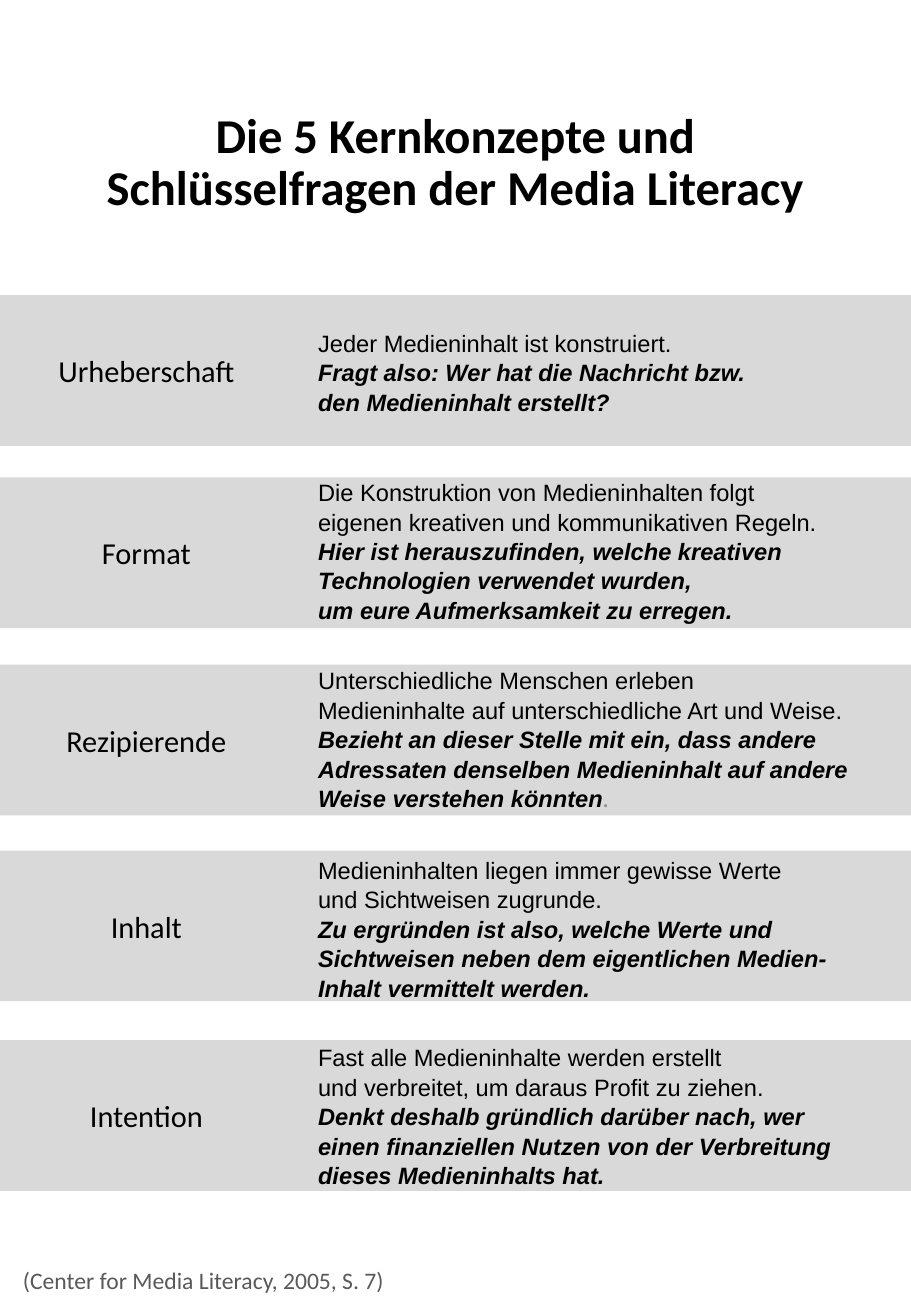
import pptx
import pptx.dml.color
import pptx.enum.shapes
import pptx.enum.text
import pptx.util

PX = 9144  # 100 px to the inch
SLIDE_W, SLIDE_H = 750, 1083
BAND_H = 124
LABEL_W = 241
BODY_LEFT, BODY_H = 252, 88
COLORS = {"band": "D9D9D9", "text": "000000", "source": "595959", "period": "8C8C8C"}
ANCHOR = pptx.enum.text.MSO_ANCHOR
ALIGN = pptx.enum.text.PP_ALIGN

# band top, body top, label, statement lines, question lines
CONCEPTS = [
    (243, 262, "Urheberschaft",
     ["Jeder Medieninhalt ist konstruiert."],
     ["Fragt also: Wer hat die Nachricht bzw.", "den Medieninhalt erstellt?"]),
    (393, 409, "Format",
     ["Die Konstruktion von Medieninhalten folgt",
      "eigenen kreativen und kommunikativen Regeln."],
     ["Hier ist herauszufinden, welche kreativen",
      "Technologien verwendet wurden,",
      "um eure Aufmerksamkeit zu erregen."]),
    (547, 564, "Rezipierende",
     ["Unterschiedliche Menschen erleben",
      "Medieninhalte auf unterschiedliche Art und Weise."],
     ["Bezieht an dieser Stelle mit ein, dass andere",
      "Adressaten denselben Medieninhalt auf andere",
      "Weise verstehen könnten"]),
    (700, 720, "Inhalt",
     ["Medieninhalten liegen immer gewisse Werte",
      "und Sichtweisen zugrunde."],
     ["Zu ergründen ist also, welche Werte und",
      "Sichtweisen neben dem eigentlichen Medien-",
      "Inhalt vermittelt werden."]),
    (856, 874, "Intention",
     ["Fast alle Medieninhalte werden erstellt",
      "und verbreitet, um daraus Profit zu ziehen."],
     ["Denkt deshalb gründlich darüber nach, wer",
      "einen finanziellen Nutzen von der Verbreitung",
      "dieses Medieninhalts hat."]),
]


def box(*lengths):
    return [pptx.util.Emu(length * PX) for length in lengths]


def rgb(name):
    return pptx.dml.color.RGBColor.from_string(COLORS[name])


def write(paragraph, text, size=14, font="Calibri", color="text", bold=False,
          italic=False, align=ALIGN.LEFT, spacing=1.0):
    """Append a formatted run to the paragraph."""
    paragraph.alignment = align
    paragraph.line_spacing = spacing
    run = paragraph.add_run()
    run.text = text
    run.font.size = pptx.util.Pt(size)
    run.font.name = font
    run.font.bold = bold
    run.font.italic = italic
    run.font.color.rgb = rgb(color)


def add_frame(slide, left, top, width, height, anchor=ANCHOR.MIDDLE):
    frame = slide.shapes.add_textbox(*box(left, top, width, height)).text_frame
    frame.word_wrap = True
    frame.vertical_anchor = anchor
    return frame


def add_title(slide):
    title = slide.shapes.title
    title.left, title.top, title.width, title.height = box(56, 118, 638, 65)
    frame = title.text_frame
    frame.auto_size = pptx.enum.text.MSO_AUTO_SIZE.NONE
    frame.word_wrap = True
    frame.vertical_anchor = ANCHOR.BOTTOM
    write(frame.paragraphs[0], "Die 5 Kernkonzepte und Schlüsselfragen der Media Literacy",
          size=28.8, bold=True, align=ALIGN.CENTER, spacing=0.9)


def add_band(slide, top):
    band = slide.shapes.add_shape(pptx.enum.shapes.MSO_SHAPE.RECTANGLE,
                                  *box(0, top, SLIDE_W, BAND_H))
    band.shadow.inherit = False
    band.fill.solid()
    band.fill.fore_color.rgb = rgb("band")
    band.line.fill.background()


def add_label(slide, top, label):
    frame = add_frame(slide, 0, top, LABEL_W, BAND_H)
    write(frame.paragraphs[0], label, size=18, align=ALIGN.CENTER)


def add_body(slide, top, statement, question):
    """Write the plain statement and the emphasised question, line by line."""
    frame = add_frame(slide, BODY_LEFT, top, SLIDE_W - BODY_LEFT, BODY_H)
    for index, line in enumerate(statement + question):
        paragraph = frame.add_paragraph() if index else frame.paragraphs[0]
        emphasis = index >= len(statement)
        write(paragraph, line, font="Arial", bold=emphasis, italic=emphasis, spacing=1.04)
    return frame


def main():
    deck = pptx.Presentation()
    deck.slide_width, deck.slide_height = box(SLIDE_W, SLIDE_H)
    slide = deck.slides.add_slide(deck.slide_layouts[5])
    add_title(slide)
    for band_top, body_top, label, statement, question in CONCEPTS:
        add_band(slide, band_top)
        add_label(slide, band_top, label)
        body = add_body(slide, body_top, statement, question)
        if label == "Rezipierende":
            write(body.paragraphs[-1], ".", size=12, color="period",
                  bold=True, italic=True, spacing=1.04)
    source = add_frame(slide, 9, 1037, 508, 34, anchor=ANCHOR.TOP)
    write(source.paragraphs[0], "(Center for Media Literacy, 2005, S. 7)", color="source")
    deck.save("out.pptx")


if __name__ == "__main__":
    main()
